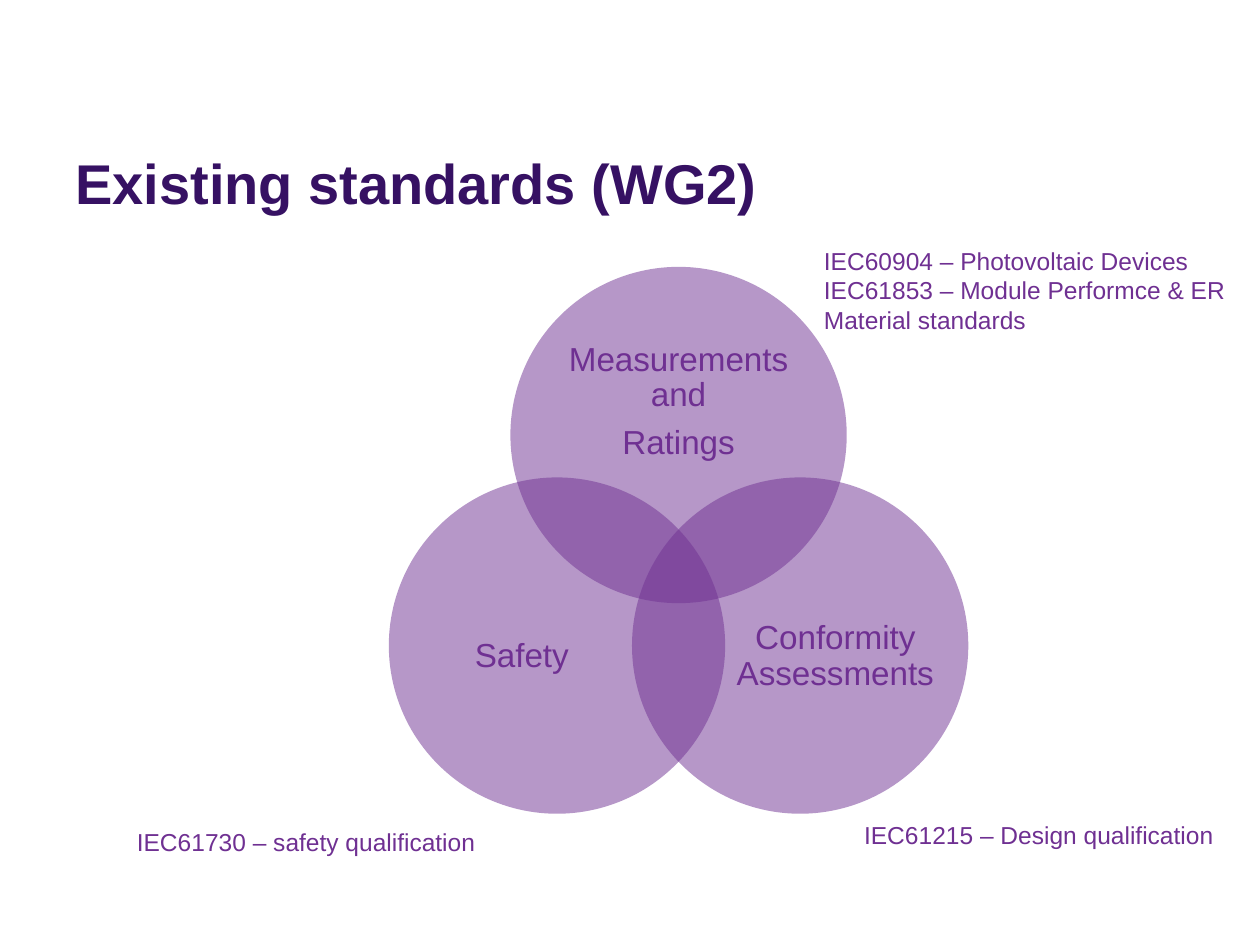
from math import cos, radians, sin

from lxml.etree import SubElement
from pptx import Presentation
from pptx.dml.color import RGBColor
from pptx.enum.shapes import MSO_SHAPE
from pptx.enum.text import MSO_ANCHOR, PP_ALIGN
from pptx.oxml.ns import qn
from pptx.util import Cm, Pt

DARK, PLUM = "361163", "6F3092"
SIZE = 6.78          # circle diameter
MID = (13.68, 11.6)  # centre of the ring of circles
RING = 2.83          # from that centre to each circle's own


def paint(color, code):
    color.rgb = RGBColor.from_string(code)


class Deck:
    def __init__(self):
        self.font = "Arial"
        self.prs = Presentation()
        self.prs.slide_width, self.prs.slide_height = Cm(25.4), Cm(19.05)
        self.slide = self.prs.slides.add_slide(self.prs.slide_layouts[6])

    def text(self, box, lines, size, code=PLUM, bold=False, mid=False):
        shape = self.slide.shapes.add_textbox(*map(Cm, box))
        frame = shape.text_frame
        frame.word_wrap = True
        if mid:
            frame.vertical_anchor = MSO_ANCHOR.MIDDLE
        for i, line in enumerate(lines):
            para = frame.paragraphs[0] if i == 0 else frame.add_paragraph()
            run = para.add_run()
            run.text = line
            run.font.name, run.font.size = self.font, Pt(size)
            run.font.bold = bold
            paint(run.font.color, code)
        return frame

    def label(self, box, lines):
        """Centre text inside a circle, without margins."""
        frame = self.text(box, lines, 19, mid=True)
        frame.margin_left = frame.margin_right = 0
        frame.margin_top = frame.margin_bottom = 0
        for para in frame.paragraphs:
            para.alignment = PP_ALIGN.CENTER
            para.line_spacing = 0.9
            para.space_after = Pt(6.65)

    def disc(self, angle):
        """Draw a half-clear circle at an angle on the ring."""
        x = MID[0] + RING * cos(radians(angle)) - SIZE / 2
        y = MID[1] + RING * sin(radians(angle)) - SIZE / 2
        shape = self.slide.shapes.add_shape(
            MSO_SHAPE.OVAL, Cm(x), Cm(y), Cm(SIZE), Cm(SIZE))
        shape.shadow.inherit = False
        shape.line.fill.background()
        shape.fill.solid()
        paint(shape.fill.fore_color, PLUM)
        tint = shape.fill._xPr.find(".//" + qn("a:srgbClr"))
        SubElement(tint, qn("a:alpha"), val="50000")


def main():
    deck = Deck()
    deck.text((1.27, 2.54, 22.86, 2.26), ["Existing standards (WG2)"],
              32, DARK, bold=True, mid=True)

    circles = [
        (-90, (11.19, 6.58, 4.98, 3.05), ["Measurements and", "Ratings"]),
        (30, (14.8, 11.38, 4.08, 3.73), ["Conformity Assessments"]),
        (150, (8.48, 11.38, 4.08, 3.73), ["Safety"]),
    ]
    for angle, box, lines in circles:
        deck.disc(angle)
        deck.label(box, lines)

    notes = [
        (16.36, 4.83, 2.06, ["IEC60904 – Photovoltaic Devices",
                             "IEC61853 – Module Performce & ER",
                             "Material standards"]),
        (17.17, 16.41, 0.86, ["IEC61215 – Design qualification"]),
        (2.51, 16.54, 0.86, ["IEC61730 – safety qualification"]),
    ]
    for x, y, high, lines in notes:
        deck.text((x, y, 8.79, high), lines, 14)

    deck.prs.save("out.pptx")


if __name__ == "__main__":
    main()
